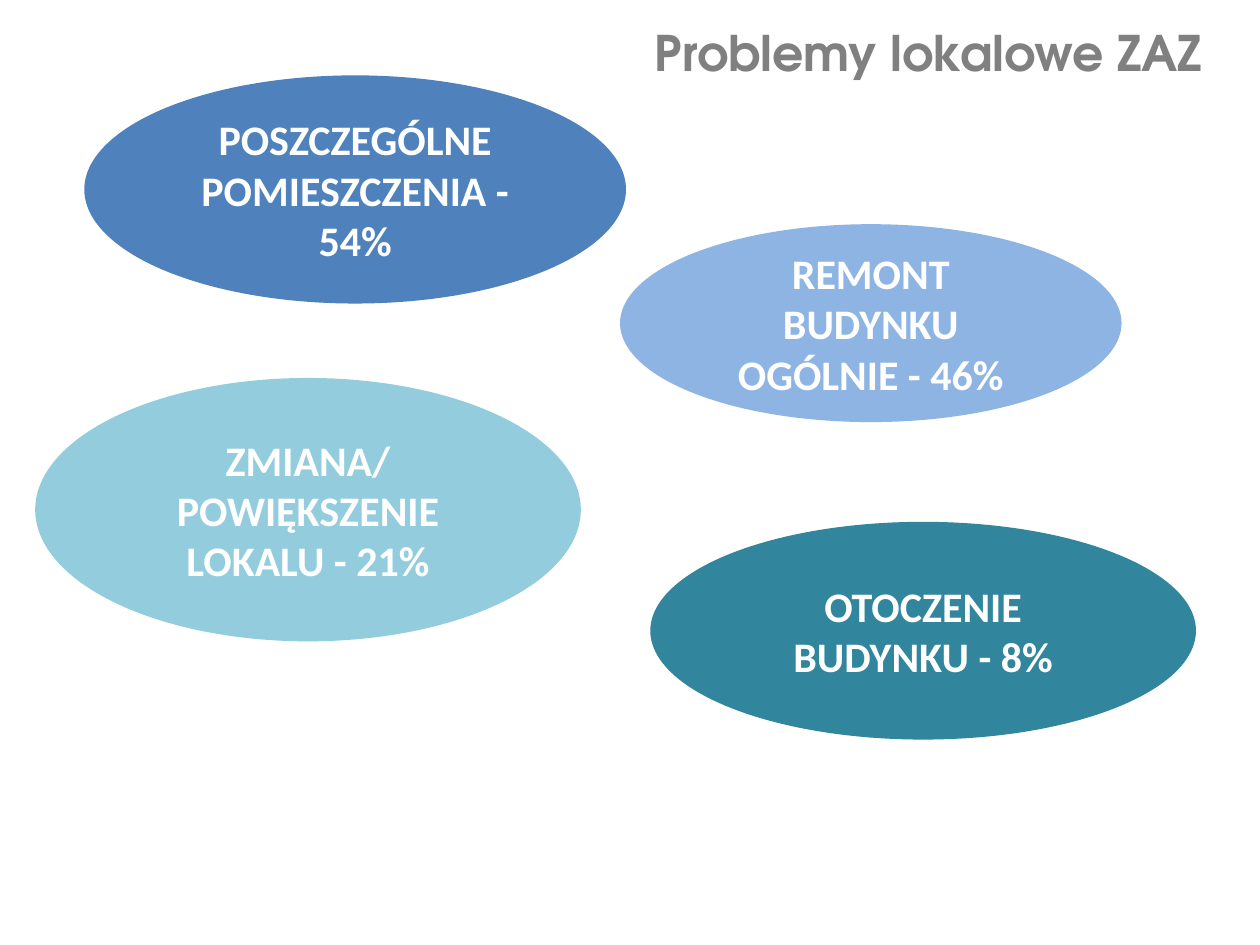
import dataclasses

import pptx
import pptx.dml.color
import pptx.enum.shapes
import pptx.enum.text
import pptx.util

Cm = pptx.util.Cm
RGB = pptx.dml.color.RGBColor.from_string
Align = pptx.enum.text.PP_ALIGN
Anchor = pptx.enum.text.MSO_ANCHOR


@dataclasses.dataclass(frozen=True)
class Theme:
    blue: str = "4F81BD"
    light_blue: str = "8EB4E3"
    aqua: str = "93CDDD"
    teal: str = "31859C"
    white: str = "FFFFFF"
    grey: str = "808080"
    title_font: str = "TeX Gyre Adventor"
    body_font: str = "Calibri"
    title_size: int = 28
    body_size: int = 24


class SlideBuilder:
    def __init__(self, s, theme):
        self.s = s
        self.theme = theme

    def fill_text(self, sp, lines, align, anchor, font, color):
        tf = sp.text_frame
        frame = {
            "word_wrap": True,
            "auto_size": pptx.enum.text.MSO_AUTO_SIZE.NONE,
            "vertical_anchor": anchor,
        }
        for name, value in frame.items():
            setattr(tf, name, value)
        for i, line in enumerate(lines):
            p = tf.add_paragraph() if i else tf.paragraphs[0]
            p.alignment = align
            r = p.add_run()
            r.text = line
            for name, value in font.items():
                setattr(r.font, name, value)
            r.font.color.rgb = RGB(color)

    def title(self, text, box):
        sp = self.s.shapes.title
        for name, value in zip(("left", "top", "width", "height"), box):
            setattr(sp, name, Cm(value))
        font = {
            "name": self.theme.title_font,
            "size": pptx.util.Pt(self.theme.title_size),
            "bold": True,
        }
        self.fill_text(sp, [text], Align.RIGHT, Anchor.TOP, font, self.theme.grey)

    def ellipse(self, lines, box, color):
        oval = pptx.enum.shapes.MSO_SHAPE.OVAL
        sp = self.s.shapes.add_shape(oval, *map(Cm, box))
        sp.shadow.inherit = False
        sp.fill.solid()
        sp.fill.fore_color.rgb = RGB(color)
        sp.line.fill.background()
        font = {
            "name": self.theme.body_font,
            "size": pptx.util.Pt(self.theme.body_size),
            "bold": True,
        }
        self.fill_text(sp, lines, Align.CENTER, Anchor.MIDDLE, font, self.theme.white)


def main():
    prs = pptx.Presentation()
    prs.slide_width, prs.slide_height = Cm(25.4), Cm(19.05)
    theme = Theme()
    slide = SlideBuilder(prs.slides.add_slide(prs.slide_layouts[5]), theme)

    slide.title("Problemy lokalowe ZAZ", (0.89, 0.33, 23.6, 1.45))
    problems = [
        (["POSZCZEGÓLNE POMIESZCZENIA - 54%"], (1.7, 1.52, 10.92, 4.6), theme.blue),
        (["REMONT BUDYNKU OGÓLNIE - 46%"], (12.5, 4.52, 10.11, 3.99), theme.light_blue),
        (["ZMIANA/", "POWIĘKSZENIE LOKALU - 21%"], (0.71, 7.62, 11, 5.31), theme.aqua),
        (["OTOCZENIE BUDYNKU - 8%"], (13.11, 10.52, 11, 4.39), theme.teal),
    ]
    for lines, box, color in problems:
        slide.ellipse(lines, box, color)

    prs.save("out.pptx")


if __name__ == "__main__":
    main()
